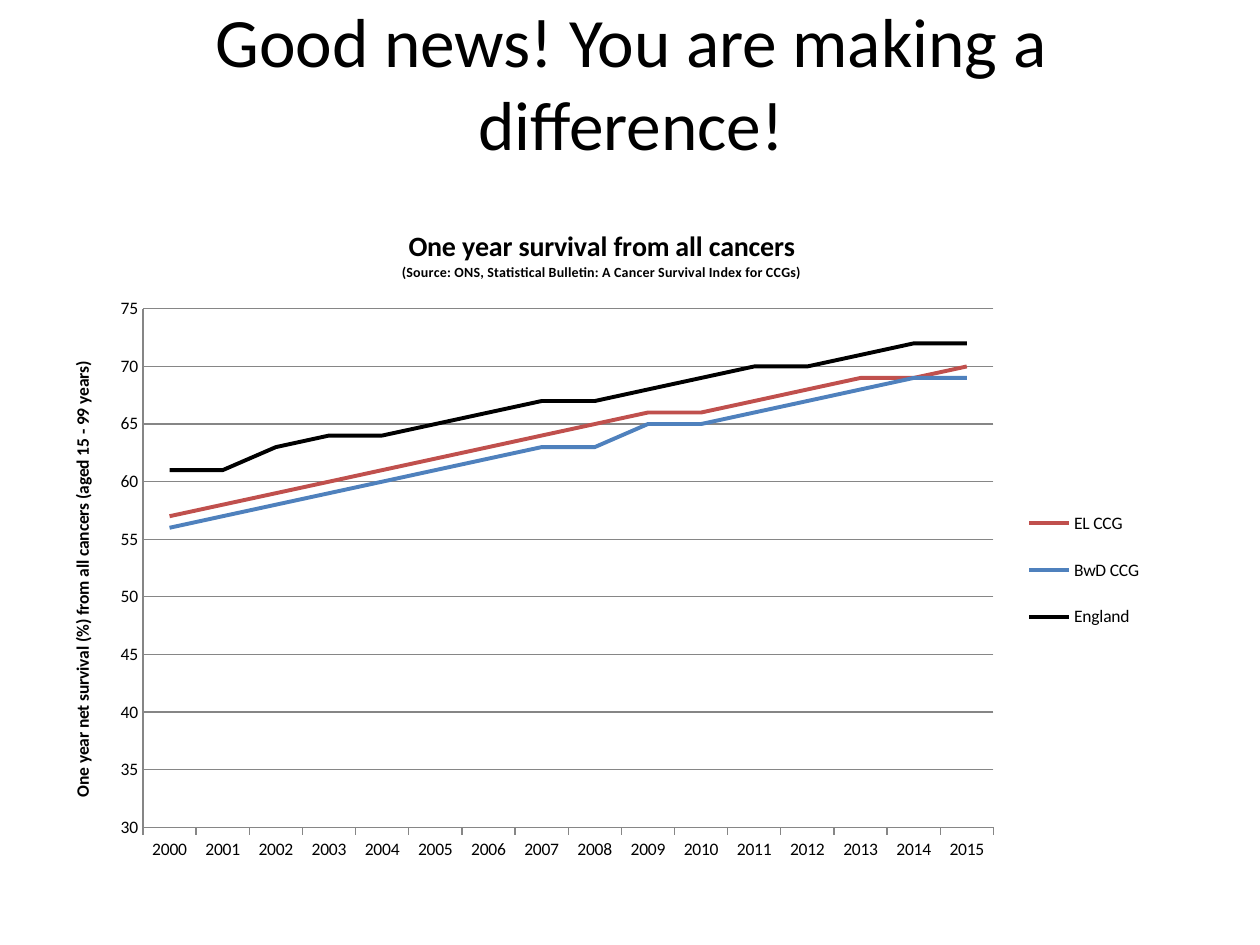
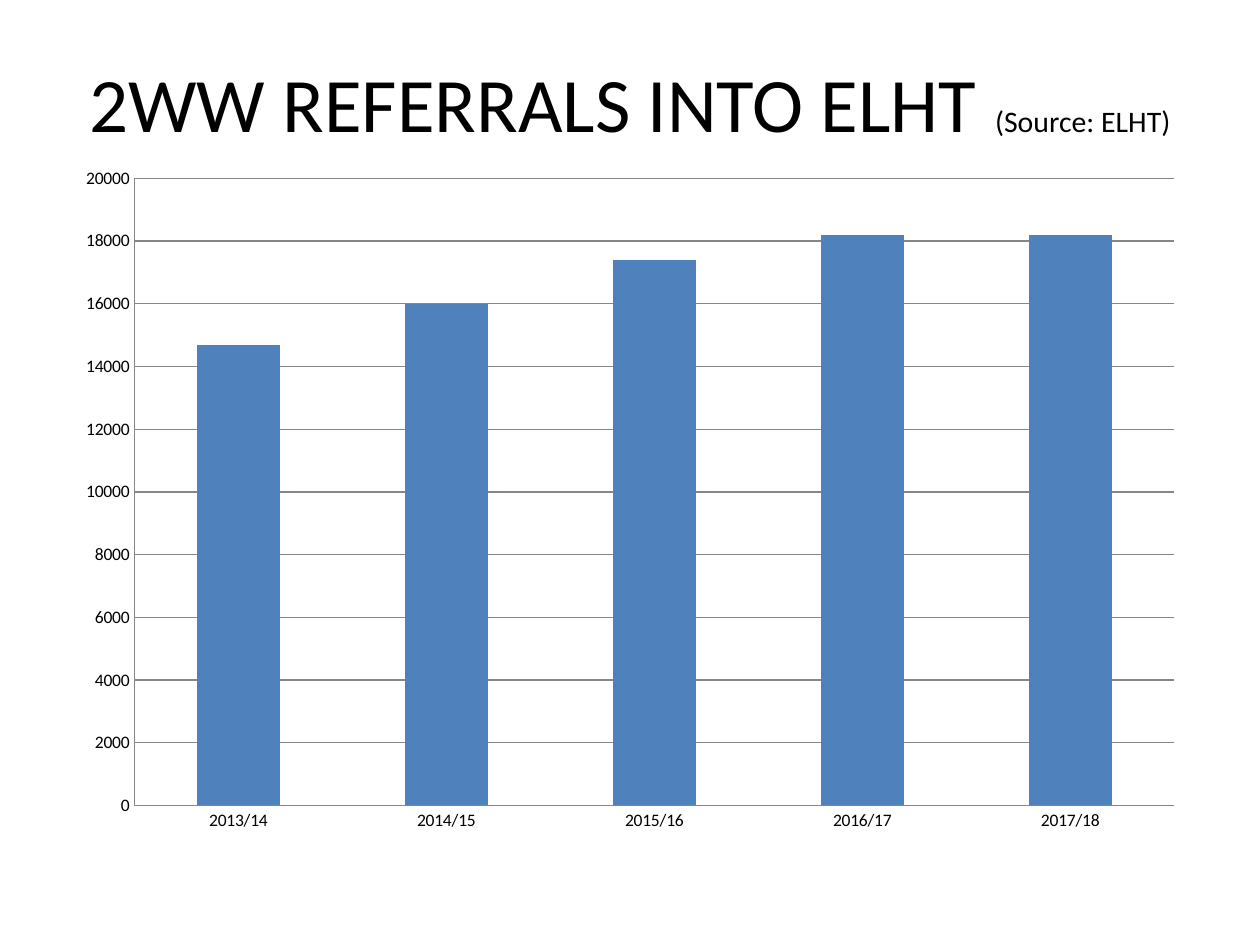
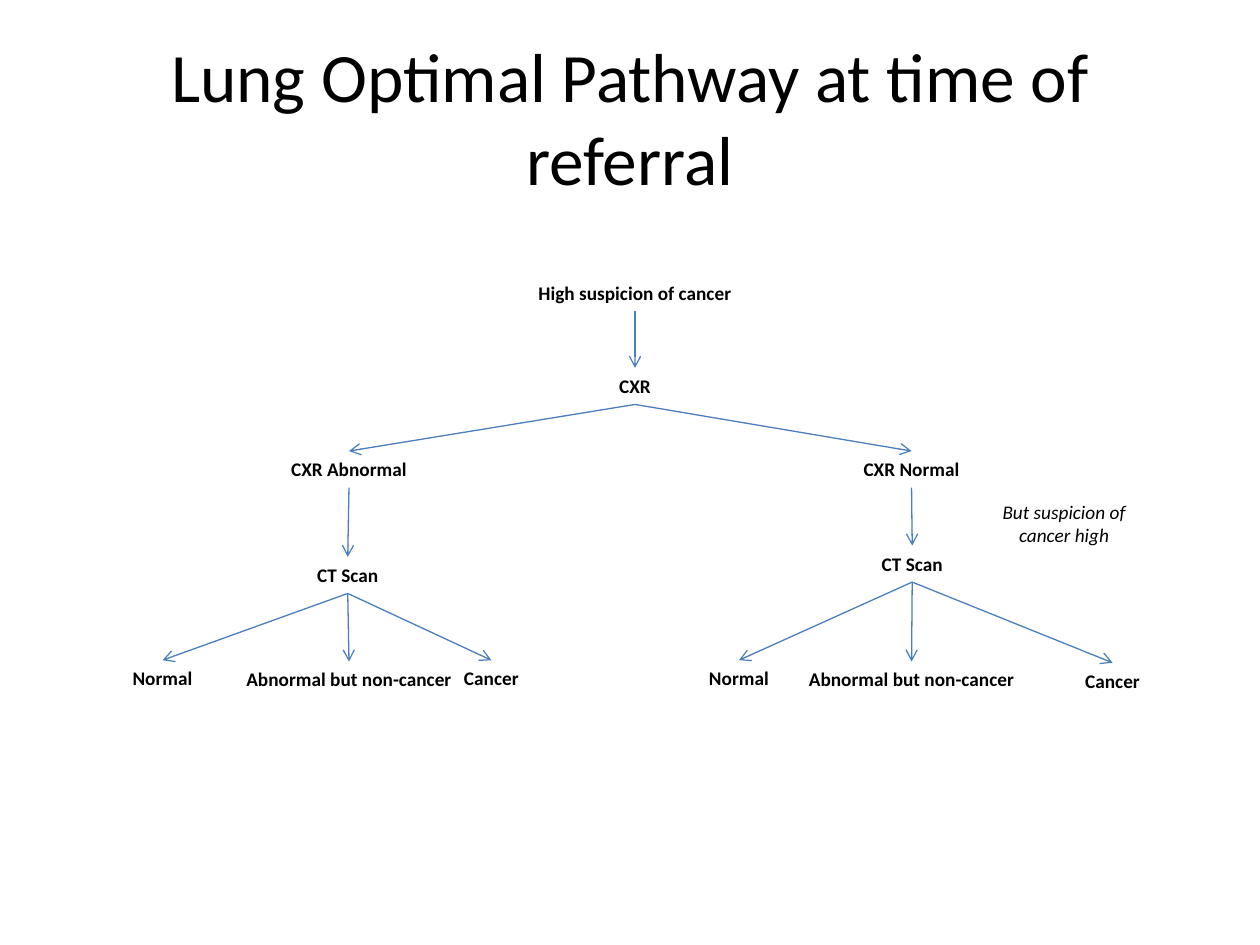
from lxml.etree import SubElement
from pptx import Presentation
from pptx.chart.data import CategoryChartData
from pptx.dml.color import RGBColor
from pptx.enum.chart import XL_CHART_TYPE, XL_LEGEND_POSITION, XL_TICK_MARK
from pptx.enum.shapes import MSO_CONNECTOR
from pptx.enum.text import MSO_ANCHOR, MSO_AUTO_SIZE, PP_ALIGN
from pptx.oxml.ns import qn
from pptx.util import Inches, Pt

FONT = "Calibri"
COLORS = {"ink": "000000", "red": "C0504D", "blue": "4F81BD",
          "arrow": "4B7EBC", "grid": "868686"}

NEWS = {
    "title": [("Good news! You are making a difference!", 39.6)],
    "spot": (0.51, 0.02, 9, 1.25),
    "kind": XL_CHART_TYPE.LINE,
    "frame": (0.28, 1.55, 9, 5.78),
    "plot": (0.095, 0.156, 0.75, 0.712),
    "scale": (30, 75, 5),
    "tick": XL_TICK_MARK.OUTSIDE,
    "cats": [str(year) for year in range(2000, 2016)],
    "series": [
        ("EL CCG", "red", [57, 58, 59, 60, 61, 62, 63, 64, 65, 66, 66, 67, 68, 69, 69, 70]),
        ("BwD CCG", "blue", [56, 57, 58, 59, 60, 61, 62, 63, 63, 65, 65, 66, 67, 68, 69, 69]),
        ("England", "ink", [61, 61, 63, 64, 64, 65, 66, 67, 67, 68, 69, 70, 70, 71, 72, 72]),
    ],
}
HEADING = [("One year survival from all cancers", 16),
           ("(Source: ONS, Statistical Bulletin: A Cancer Survival Index for CCGs)", 8)]
AXIS = "One year net survival (%) from all cancers (aged 15 - 99 years)"

REFERRALS = {
    "title": [("2WW REFERRALS INTO ELHT ", 44), ("(Source: ELHT)", 17)],
    "spot": (0.5, 0.3, 9, 1.01),
    "kind": XL_CHART_TYPE.COLUMN_CLUSTERED,
    "frame": (0.5, 1.23, 9, 5.47),
    "plot": (0.063, 0.034, 0.917, 0.91),
    "scale": (0, 20000, 2000),
    "tick": XL_TICK_MARK.NONE,
    "cats": ["2013/14", "2014/15", "2015/16", "2016/17", "2017/18"],
    "series": [("Series 1", "blue", [14700, 16000, 17400, 18200, 18200])],
}

PATHWAY = [("Lung Optimal Pathway at time of referral", 39.6)]
STEPS = {
    "start": ("High suspicion of cancer", 3.19, 2.18, 3.7),
    "cxr": ("CXR", 4.33, 2.92, 1.42),
    "abnormal": ("CXR Abnormal", 1.84, 3.58, 1.86),
    "normal": ("CXR Normal", 6.31, 3.58, 1.85),
    "left scan": ("CT Scan", 0.91, 4.42, 3.7),
    "left other": ("Abnormal but non-cancer", 1.61, 5.25, 2.32),
    "left clear": ("Normal", 0.74, 5.24, 1.1),
    "left cancer": ("Cancer", 3.37, 5.24, 1.06),
    "right scan": ("CT Scan", 5.39, 4.33, 3.7),
    "right clear": ("Normal", 5.41, 5.24, 0.91),
    "right other": ("Abnormal but non-cancer", 6.31, 5.25, 1.85),
    "right cancer": ("Cancer", 8.16, 5.26, 1.34),
}
NOTE = ("But suspicion of cancer high", 7.79, 3.92, 1.31)
LINKS = {
    "start": ["cxr"],
    "cxr": ["abnormal", "normal"],
    "abnormal": ["left scan"],
    "normal": ["right scan"],
    "left scan": ["left other", "left clear", "left cancer"],
    "right scan": ["right other", "right clear", "right cancer"],
}


def color(name):
    return RGBColor.from_string(COLORS[name])


def style(font, size, bold=False, italic=False):
    font.name = FONT
    font.size = Pt(size)
    font.bold = bold
    font.italic = italic
    font.color.rgb = color("ink")


def add_slide(deck, runs, spot):
    slide = deck.slides.add_slide(deck.slide_layouts[5])
    title = slide.shapes.title
    title.left, title.top, title.width, title.height = map(Inches, spot)
    frame = title.text_frame
    frame.auto_size = MSO_AUTO_SIZE.NONE
    frame.vertical_anchor = MSO_ANCHOR.MIDDLE
    para = frame.paragraphs[0]
    para.alignment = PP_ALIGN.CENTER
    for text, size in runs:
        run = para.add_run()
        run.text = text
        style(run.font, size)
    return slide


def place(chart, tag, index, **sizes):
    host = chart._chartSpace.find(".//" + qn(tag))
    for old in host.findall(qn("c:layout")):
        host.remove(old)
    layout = SubElement(host, qn("c:layout"))
    host.insert(index, layout)
    manual = SubElement(layout, qn("c:manualLayout"))
    if tag == "c:plotArea":
        SubElement(manual, qn("c:layoutTarget")).set("val", "inner")
    for key in ("x", "y"):
        SubElement(manual, qn(f"c:{key}Mode")).set("val", "edge")
    for key, size in sizes.items():
        SubElement(manual, qn(f"c:{key}")).set("val", str(size))


def add_chart(slide, data):
    table = CategoryChartData()
    table.categories = data["cats"]
    for name, _, values in data["series"]:
        table.add_series(name, values)
    chart = slide.shapes.add_chart(data["kind"], *map(Inches, data["frame"]), table).chart
    chart.has_title = False
    chart.has_legend = False
    style(chart.font, 10)
    value, cat = chart.value_axis, chart.category_axis
    value.minimum_scale, value.maximum_scale, value.major_unit = data["scale"]
    value.major_tick_mark = XL_TICK_MARK.NONE
    cat.major_tick_mark = data["tick"]
    value.has_major_gridlines = True
    for part in (value, cat, value.major_gridlines):
        part.format.line.color.rgb = color("grid")
        part.format.line.width = Pt(0.75)
    plot = chart.plots[0]
    plot.vary_by_categories = False
    for series, (_, tone, _) in zip(plot.series, data["series"]):
        if data["kind"] == XL_CHART_TYPE.LINE:
            series.smooth = False
            series.format.line.color.rgb = color(tone)
            series.format.line.width = Pt(2.25)
        else:
            plot.gap_width = 150
            series.format.fill.solid()
            series.format.fill.fore_color.rgb = color(tone)
    place(chart, "c:plotArea", 0, **dict(zip("xywh", data["plot"])))
    return chart


def label(chart):
    chart.has_title = True
    frame = chart.chart_title.text_frame
    frame.text = "\n".join(text for text, _ in HEADING)
    for para, (_, size) in zip(frame.paragraphs, HEADING):
        style(para.runs[0].font, size, bold=True)
    place(chart, "c:title", 1, x=0.32, y=0.04)
    frame = chart.value_axis.axis_title.text_frame
    frame.text = AXIS
    style(frame.paragraphs[0].runs[0].font, 10, bold=True)
    chart.has_legend = True
    chart.legend.position = XL_LEGEND_POSITION.RIGHT
    chart.legend.include_in_layout = False
    style(chart.legend.font, 10)
    place(chart, "c:legend", 1, x=0.86, y=0.4, w=0.13, h=0.23)


def add_box(slide, text, left, top, width, height=0.29, **face):
    box = slide.shapes.add_textbox(*map(Inches, (left, top, width, height)))
    frame = box.text_frame
    frame.word_wrap = True
    frame.auto_size = MSO_AUTO_SIZE.SHAPE_TO_FIT_TEXT
    frame.text = text
    para = frame.paragraphs[0]
    para.alignment = PP_ALIGN.CENTER
    style(para.runs[0].font, 11, **face)
    return box


def add_arrow(slide, source, target):
    link = slide.shapes.add_connector(MSO_CONNECTOR.STRAIGHT, 0, 0, 0, 0)
    link.begin_connect(source, 2)
    link.end_connect(target, 0)
    link.line.color.rgb = color("arrow")
    link.line.width = Pt(0.75)
    props = link._element.spPr
    SubElement(props.find(qn("a:ln")), qn("a:tailEnd")).set("type", "arrow")
    SubElement(props, qn("a:effectLst"))


def main():
    deck = Presentation()
    deck.slide_width, deck.slide_height = Inches(10), Inches(7.5)

    news, _ = [add_chart(add_slide(deck, data["title"], data["spot"]), data)
               for data in (NEWS, REFERRALS)]
    label(news)

    slide = add_slide(deck, PATHWAY, (0.5, 0.3, 9, 1.25))
    boxes = {key: add_box(slide, *step, bold=True) for key, step in STEPS.items()}
    add_box(slide, *NOTE, height=0.47, italic=True)
    for source, targets in LINKS.items():
        for target in targets:
            add_arrow(slide, boxes[source], boxes[target])

    deck.save("out.pptx")


if __name__ == "__main__":
    main()
